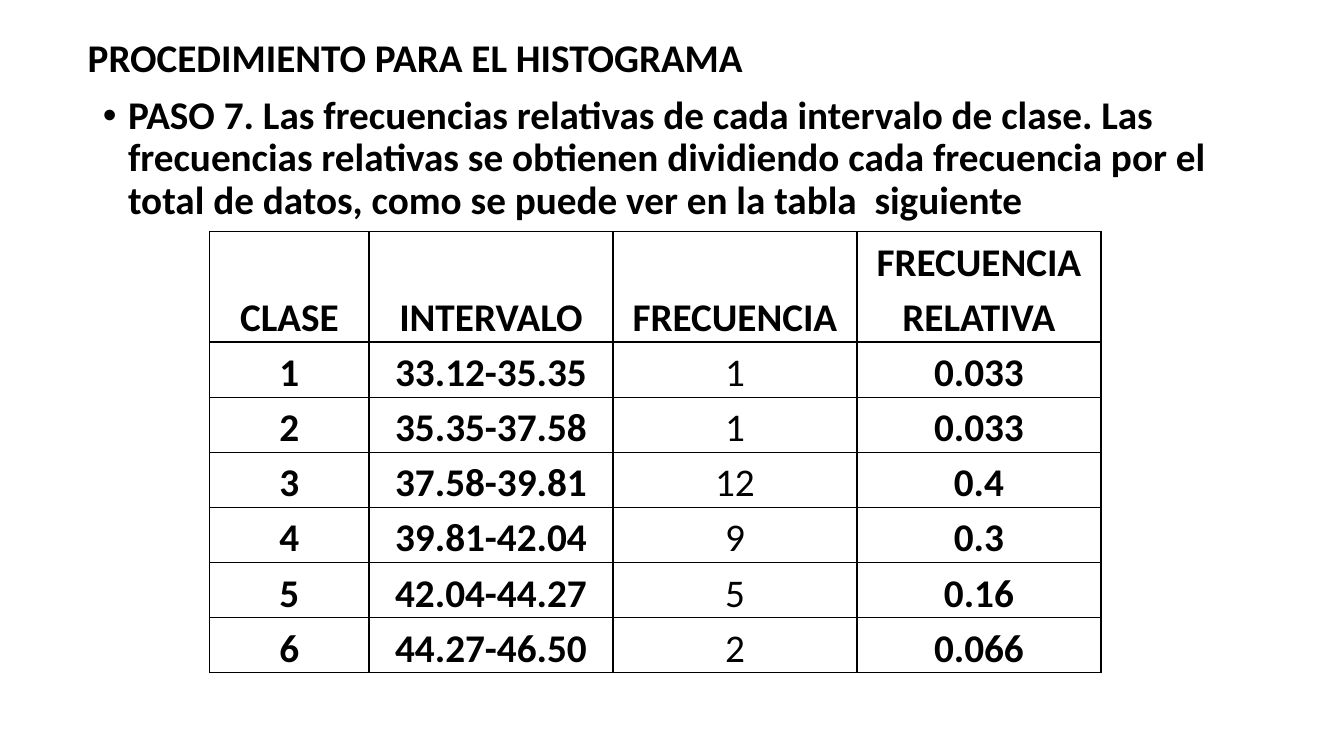
from lxml.etree import SubElement
from pptx import Presentation
from pptx.dml.color import RGBColor
from pptx.enum.text import MSO_ANCHOR, MSO_AUTO_SIZE, PP_ALIGN
from pptx.oxml.ns import qn
from pptx.util import Inches, Pt

# Content
TITLE = "PROCEDIMIENTO PARA EL HISTOGRAMA"
STEP = ("PASO 7. Las frecuencias relativas de cada intervalo de clase. "
        "Las frecuencias relativas se obtienen dividiendo cada frecuencia "
        "por el total de datos, como se puede ver en la tabla  siguiente")
HEAD = ("CLASE", "INTERVALO", "FRECUENCIA", "FRECUENCIA RELATIVA")
ROWS = [
    ("1", "33.12-35.35", "1", "0.033"),
    ("2", "35.35-37.58", "1", "0.033"),
    ("3", "37.58-39.81", "12", "0.4"),
    ("4", "39.81-42.04", "9", "0.3"),
    ("5", "42.04-44.27", "5", "0.16"),
    ("6", "44.27-46.50", "2", "0.066"),
]
WIDTHS = (1.58, 2.42, 2.42, 2.42)
HEAD_H, ROW_H = 1.09, 0.54
COUNT_COL = 2
INK = "000000"


def color(code):
    return RGBColor.from_string(code)


def write(frame, text, align, space, bold=True):
    para = frame.paragraphs[0]
    para.alignment = align
    para.line_spacing = space
    run = para.add_run()
    run.text = text
    font = run.font
    font.name, font.size, font.bold = "Calibri", Pt(28), bold
    font.color.rgb = color(INK)
    return para


def place(shape, left, top, width, height):
    shape.left, shape.top = Inches(left), Inches(top)
    shape.width, shape.height = Inches(width), Inches(height)
    frame = shape.text_frame
    frame.word_wrap = True
    frame.auto_size = MSO_AUTO_SIZE.NONE
    return frame


def border(cell):
    props = cell._tc.get_or_add_tcPr()
    for side in ("lnL", "lnR", "lnT", "lnB"):
        line = SubElement(props, qn("a:" + side), w=str(Pt(1)))
        fill = SubElement(line, qn("a:solidFill"))
        SubElement(fill, qn("a:srgbClr"), val=INK)


deck = Presentation()
deck.slide_width, deck.slide_height = Inches(13.33), Inches(7.5)
slide = deck.slides.add_slide(deck.slide_layouts[1])

# Title
frame = place(slide.shapes.title, 0.77, 0.28, 11.5, 0.63)
frame.vertical_anchor = MSO_ANCHOR.MIDDLE
write(frame, TITLE, PP_ALIGN.LEFT, 0.9)

# Step with bullet
frame = place(slide.placeholders[1], 0.92, 0.9, 11.96, 4.82)
para = write(frame, STEP, PP_ALIGN.LEFT, 0.9)
para.space_before = Pt(10)
props = para._p.get_or_add_pPr()
props.set("marL", str(Inches(0.25)))
props.set("indent", str(-Inches(0.25)))
SubElement(props, qn("a:buFont"), typeface="Arial")
SubElement(props, qn("a:buChar"), char="•")

# Frequency table
lines = [HEAD] + ROWS
table = slide.shapes.add_table(
    len(lines), len(HEAD), Inches(2.08), Inches(2.3),
    Inches(sum(WIDTHS)), Inches(HEAD_H + ROW_H * len(ROWS))).table
table.first_row = table.horz_banding = False
for col, width in zip(table.columns, WIDTHS):
    col.width = Inches(width)
for r, line in enumerate(lines):
    table.rows[r].height = Inches(ROW_H if r else HEAD_H)
    for c, text in enumerate(line):
        cell = table.cell(r, c)
        cell.margin_left = cell.margin_right = Inches(0.05)
        cell.margin_top = cell.margin_bottom = 0
        cell.vertical_anchor = MSO_ANCHOR.BOTTOM
        border(cell)
        cell.fill.background()
        bold = r == 0 or c != COUNT_COL
        para = write(cell.text_frame, text, PP_ALIGN.CENTER, 1.15, bold)
        para.space_after = Pt(10)

deck.save("out.pptx")
